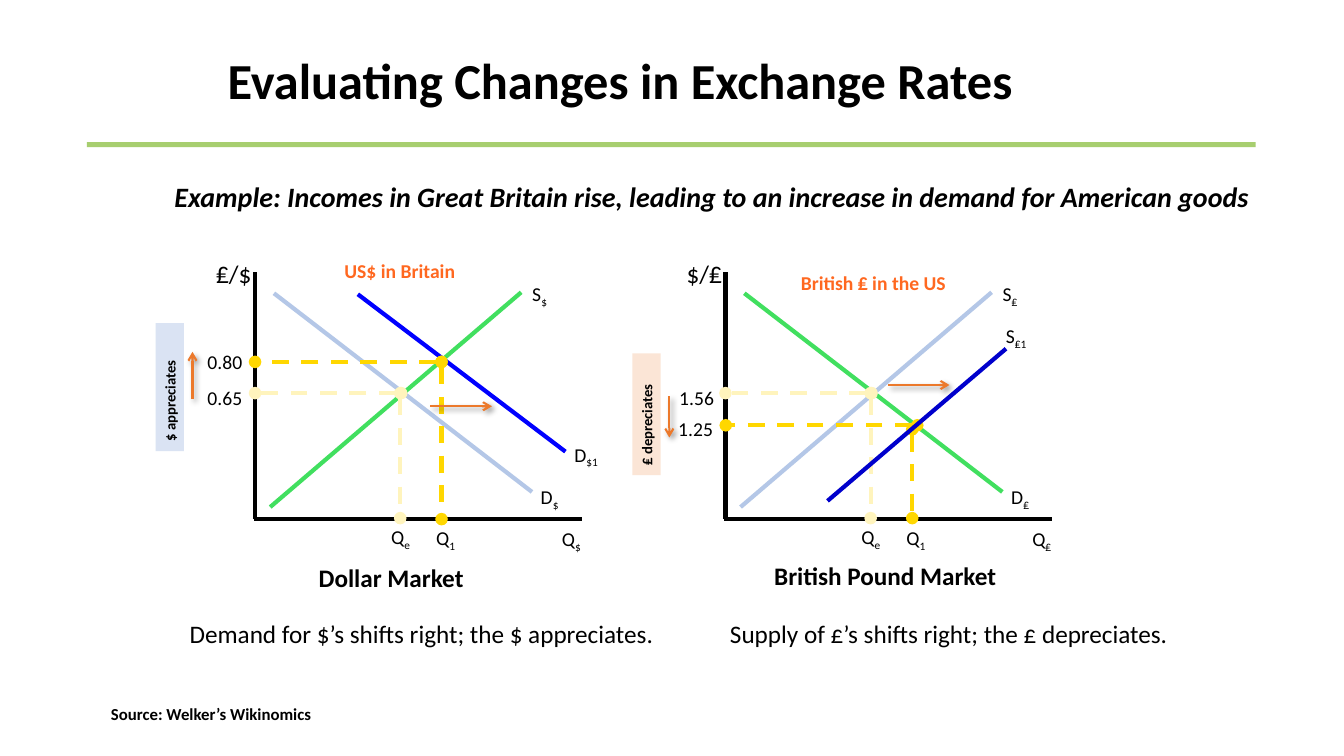
from lxml import etree
from pptx import Presentation
from pptx import util as u
from pptx.dml import color
from pptx.enum import dml, shapes, text
from pptx.oxml import ns

theme = dict(
    font="Calibri", ink="000000", rule="A7CE6F", head="FF6820",
    pale="B4C7E7", green="41DF5F", cream="FFF4BD", gold="FFD700",
    arrow="EC792B", title=36, lead=20, body=18, label=14, note=12, tag=10.5,
)
Pt = u.Pt
rgb = color.RGBColor.from_string

deck = Presentation()
deck.slide_width, deck.slide_height = Pt(960), Pt(540)
slide = deck.slides.add_slide(deck.slide_layouts[6])
items = slide.shapes


def write(shape, words, size, inset=7.2, tint="ink", bold=False, italic=False):
    frame = shape.text_frame
    frame.word_wrap = True
    frame.auto_size = text.MSO_AUTO_SIZE.SHAPE_TO_FIT_TEXT
    frame.margin_left = frame.margin_right = Pt(inset)
    frame.margin_top = frame.margin_bottom = Pt(3.6)
    para = frame.paragraphs[0]
    para.alignment = text.PP_ALIGN.LEFT
    for spot, part in enumerate(words.split("|")):
        run = para.add_run()
        run.text = part
        run.font.name, run.font.size = theme["font"], Pt(theme[size])
        run.font.bold, run.font.italic = bold, italic
        run.font.color.rgb = rgb(theme[tint])
        if spot:
            run._r.get_or_add_rPr().set("baseline", "-25000")
    return para


def draw(x1, y1, x2, y2, tint, width=3, ends=(), dash=False):
    line = items.add_connector(
        shapes.MSO_CONNECTOR.STRAIGHT, Pt(x1), Pt(y1), Pt(x2), Pt(y2))
    line.line.color.rgb = rgb(tint)
    line.line.width = Pt(width)
    if dash:
        line.line.dash_style = dml.MSO_LINE.DASH
    pen = line.line._get_or_add_ln()
    for end, kind in ends:
        etree.SubElement(pen, ns.qn("a:" + end), type=kind)
    return etree.SubElement(line._element.spPr, ns.qn("a:effectLst"))


dots = [("headEnd", "oval"), ("tailEnd", "oval")]

rule = items.add_shape(
    shapes.MSO_SHAPE.RECTANGLE, Pt(62), Pt(101.5), Pt(835), Pt(3.6))
rule.shadow.inherit = False
rule.fill.solid()
rule.fill.fore_color.rgb = rgb(theme["rule"])
rule.line.fill.background()

markets = [
    dict(
        left=0, money="$", unit="₤/$", down="pale", up="green",
        head=("US$ in Britain", 219, 181.4, 133.2),
        shift=("D|$1", 403.2, 312.5),
        prices=[("0.65", 141.1, 272.2), ("0.80", 141.1, 246.2)],
        news=[
            (255.6, 210.2, 403.9, 322.6, "0000FF"),
            (315.4, 258.5, 182.2, 258.5, theme["gold"], 3, dots, True),
            (315.4, 258.5, 315.4, 370.8, theme["gold"], 3, dots, True),
        ],
        tag=("$ appreciates", 75.6, 266.4, 91.4, "DAE3F3"),
        arrows=[(307.4, 290.2, 351.4, 290.2), (137.5, 285.1, 137.5, 251.3)],
    ),
    dict(
        left=336, money="₤", unit="$/₤", down="green", up="pale",
        head=("British ₤ in the US", 543.6, 190.1, 160.6),
        shift=("S|₤1", 711.4, 228.2),
        prices=[("1.56", 478.1, 272.2), ("1.25", 477.4, 294.5)],
        news=[
            (655.2, 303.8, 518.4, 303.8, theme["gold"], 3, dots, True),
            (651.6, 306.7, 651.6, 370.1, theme["gold"], 3, dots, True),
            (591.1, 357.8, 718.6, 249.1, "0000CC"),
        ],
        tag=("₤ depreciates", 418.3, 285.8, 87.1, "FBE5D6"),
        arrows=[(634.3, 275, 678.2, 275), (478.1, 283, 478.1, 312.5)],
    ),
]

for market in markets:
    left, money = market["left"], market["money"]
    for x1, y1, x2, y2, tint in [
        (182.2, 194.4, 182.2, 370.8, "ink"),
        (181.4, 370.8, 415.4, 370.8, "ink"),
        (195.7, 209.5, 380, 351.4, market["down"]),
        (193, 362.2, 372.3, 208.8, market["up"]),
    ]:
        draw(left + x1, y1, left + x2, y2, theme[tint])
    for x1, x2, y2 in [(286.6, 182.2, 280.8), (285.9, 285.9, 370.1)]:
        draw(left + x1, 280.8, left + x2, y2, theme["cream"], 3, dots, True)
    for line in market["news"]:
        draw(*line)

    words, x, y, wide = market["head"]
    box = items.add_textbox(Pt(x), Pt(y), Pt(wide), Pt(24.2))
    para = write(box, words, "label", tint="head", bold=True)
    para.alignment = text.PP_ALIGN.CENTER
    box = items.add_textbox(Pt(left + 147.4), Pt(180.7), Pt(56), Pt(29))
    write(box, market["unit"], "body")
    for words, x, y in [
        ("D|" + money, left + 379.2, 342.7),
        ("S|" + money, left + 373.1, 198),
        ("Q|e", left + 272.3, 371.5),
        ("Q|1", left + 304.4, 372.2),
        ("Q|" + money, left + 394.3, 373),
        market["shift"],
        *market["prices"],
    ]:
        box = items.add_textbox(Pt(x), Pt(y), Pt(50), Pt(24.2))
        write(box, words, "label")

    words, x, y, wide, tint = market["tag"]
    tag = items.add_shape(
        shapes.MSO_SHAPE.RECTANGLE, Pt(x), Pt(y), Pt(wide), Pt(20.2))
    tag.rotation = 270
    tag.shadow.inherit = False
    tag.fill.solid()
    tag.fill.fore_color.rgb = rgb(tint)
    tag.line.fill.background()
    write(tag, words, "tag", bold=True)

    for ends in market["arrows"]:
        effect = draw(*ends, theme["arrow"], 1.5, [("tailEnd", "arrow")])
        shade = etree.SubElement(
            effect, ns.qn("a:outerShdw"), blurRad=str(Pt(4)),
            dist=str(Pt(3)), dir="2700000", rotWithShape="0")
        tone = etree.SubElement(shade, ns.qn("a:srgbClr"), val=theme["ink"])
        etree.SubElement(tone, ns.qn("a:alpha"), val="40000")

for words, x, y, wide, high, size, bold, italic in [
    ("Evaluating Changes in Exchange Rates",
     159, 31.7, 637, 51, "title", True, False),
    ("Example: Incomes in Great Britain rise, leading to an increase in "
     "demand for American goods", 121, 124.6, 780.5, 31.7, "lead", True, True),
    ("Dollar Market", 224, 398.2, 192, 29, "body", True, False),
    ("British Pound Market", 549.4, 396.7, 187, 29, "body", True, False),
    ("Source: Welker’s Wikinomics", 75.6, 499, 240, 21.6, "note", True, False),
]:
    box = items.add_textbox(Pt(x), Pt(y), Pt(wide), Pt(high))
    write(box, words, size, 3.6, bold=bold, italic=italic)

box = items.add_textbox(Pt(131.8), Pt(437.8), Pt(722), Pt(29))
para = write(
    box, "Demand for $’s shifts right; the $ appreciates.\t"
    "Supply of £’s shifts right; the £ depreciates.", "body", 3.6)
tabs = etree.SubElement(para._p.get_or_add_pPr(), ns.qn("a:tabLst"))
etree.SubElement(tabs, ns.qn("a:tab"), pos=str(Pt(386)), algn="l")

deck.save("out.pptx")
